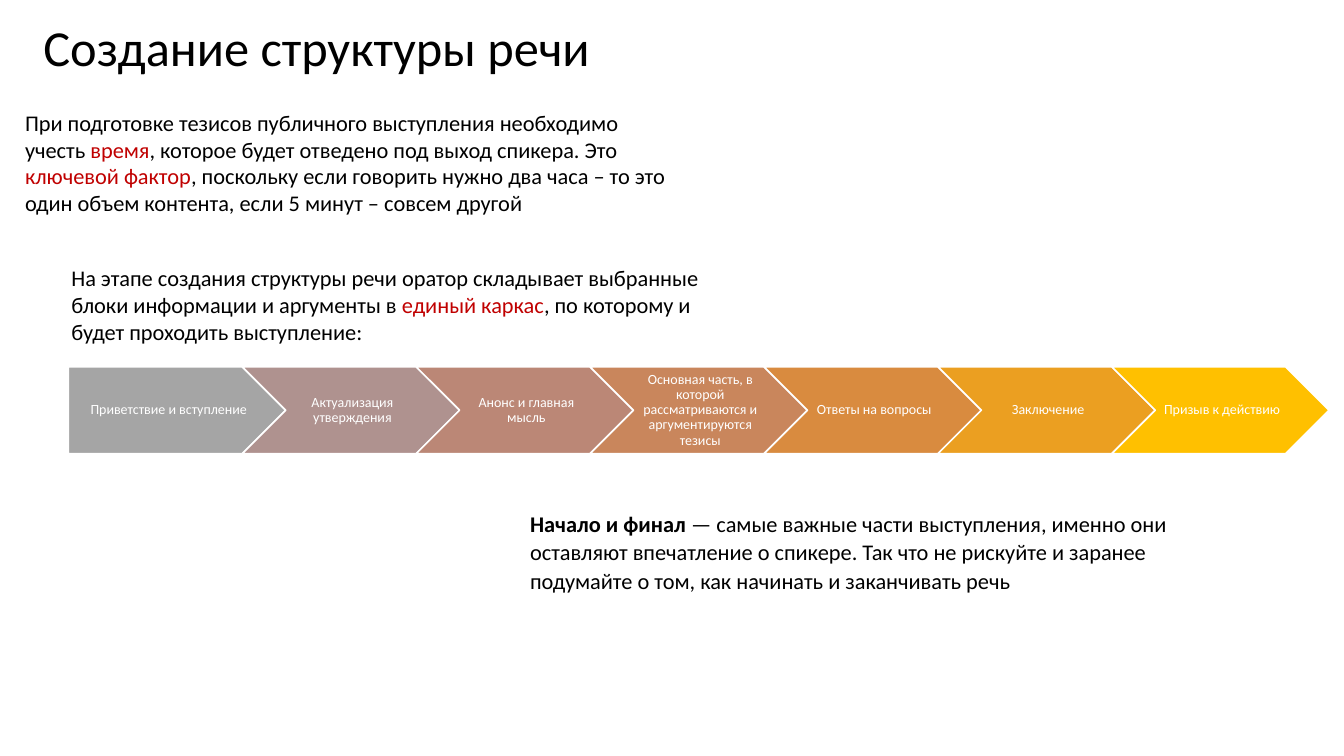
"""Build the slide on structuring a speech, with a seven-step chevron row."""
from pptx import Presentation
from pptx.dml.color import RGBColor
from pptx.enum.shapes import MSO_SHAPE as Shape
from pptx.enum.text import MSO_ANCHOR as Anchor, MSO_AUTO_SIZE as Fit, PP_ALIGN as Align
from pptx.util import Inches, Pt

FACE = "Calibri"
BLACK = RGBColor(0, 0, 0)
WHITE = RGBColor(255, 255, 255)
RED = RGBColor(0xC0, 0, 0)
GRAY = RGBColor(0xA5, 0xA5, 0xA5)
MAUVE = RGBColor(0xAF, 0x92, 0x8F)
ROSE = RGBColor(0xBB, 0x87, 0x76)
CLAY = RGBColor(0xC9, 0x86, 0x5C)
OCHRE = RGBColor(0xD9, 0x8B, 0x3F)
AMBER = RGBColor(0xEB, 0x9F, 0x21)
GOLD = RGBColor(0xFF, 0xC0, 0)

LEFT, TOP, WIDE, HIGH, PITCH = 0.68, 3.64, 2.15, 0.86, 1.725


def style(para, size, color):
    para.font.name = FACE
    para.font.size = Pt(size)
    para.font.color.rgb = color


def note(left, top, high, parts):
    box = slide.shapes.add_textbox(Inches(left), Inches(top), Inches(6.67), Inches(high))
    box.text_frame.word_wrap = True
    para = box.text_frame.paragraphs[0]
    style(para, 16, BLACK)
    for text, color, bold in parts:
        run = para.add_run()
        run.text = text
        if color:
            run.font.color.rgb = color
        if bold:
            run.font.bold = True
    return para


deck = Presentation()
deck.slide_width, deck.slide_height = Inches(13.33), Inches(7.5)
slide = deck.slides.add_slide(deck.slide_layouts[5])

title = slide.shapes.title
title.left, title.top = Inches(0.33), Inches(-0.23)
title.width, title.height = Inches(11.5), Inches(1.45)
title.text = "Создание структуры речи"
title.text_frame.auto_size = Fit.NONE
title.text_frame.vertical_anchor = Anchor.MIDDLE
head = title.text_frame.paragraphs[0]
head.alignment = Align.LEFT
head.line_spacing = 0.9
style(head, 36, BLACK)

note(0.15, 1.03, 1.18, [
    ("При подготовке тезисов публичного выступления необходимо учесть ", None, False),
    ("время", RED, False),
    (", которое будет отведено под выход спикера. Это ", None, False),
    ("ключевой фактор", RED, False),
    (", поскольку если говорить нужно два часа – то это один объем контента, "
     "если 5 минут – совсем другой", None, False),
])

steps = [
    ("Приветствие и вступление", GRAY),
    ("Актуализация утверждения", MAUVE),
    ("Анонс и главная мысль", ROSE),
    ("Основная часть, в которой рассматриваются и аргументируются тезисы", CLAY),
    ("Ответы на вопросы", OCHRE),
    ("Заключение", AMBER),
    ("Призыв к действию", GOLD),
]
for col, (text, color) in enumerate(steps):
    kind = Shape.CHEVRON if col else Shape.PENTAGON
    step = slide.shapes.add_shape(kind, Inches(LEFT + col * PITCH), Inches(TOP),
                                  Inches(WIDE), Inches(HIGH))
    step.shadow.inherit = False
    step.fill.solid()
    step.fill.fore_color.rgb = color
    step.line.color.rgb = WHITE
    step.line.width = Pt(1)
    frame = step.text_frame
    frame.word_wrap = True
    frame.vertical_anchor = Anchor.MIDDLE
    frame.margin_left = Inches(0.04 if col else 0.06)
    frame.margin_right = Inches(0.01)
    frame.margin_top = frame.margin_bottom = Inches(0.03)
    para = frame.paragraphs[0]
    para.text = text
    para.alignment = Align.CENTER
    para.line_spacing = 0.9
    style(para, 10, WHITE)

note(0.61, 2.57, 0.91, [
    ("На этапе создания структуры речи оратор складывает выбранные блоки "
     "информации и аргументы в ", None, False),
    ("единый каркас", RED, False),
    (", по которому и будет проходить выступление:", None, False),
])

last = note(5.16, 4.99, 0.95, [
    ("Начало и финал ", None, True),
    ("— самые важные части выступления, именно они оставляют впечатление о спикере. "
     "Так что не рискуйте и заранее подумайте о том, как начинать и заканчивать речь",
     None, False),
])
last.line_spacing = 1.07

deck.save("out.pptx")
